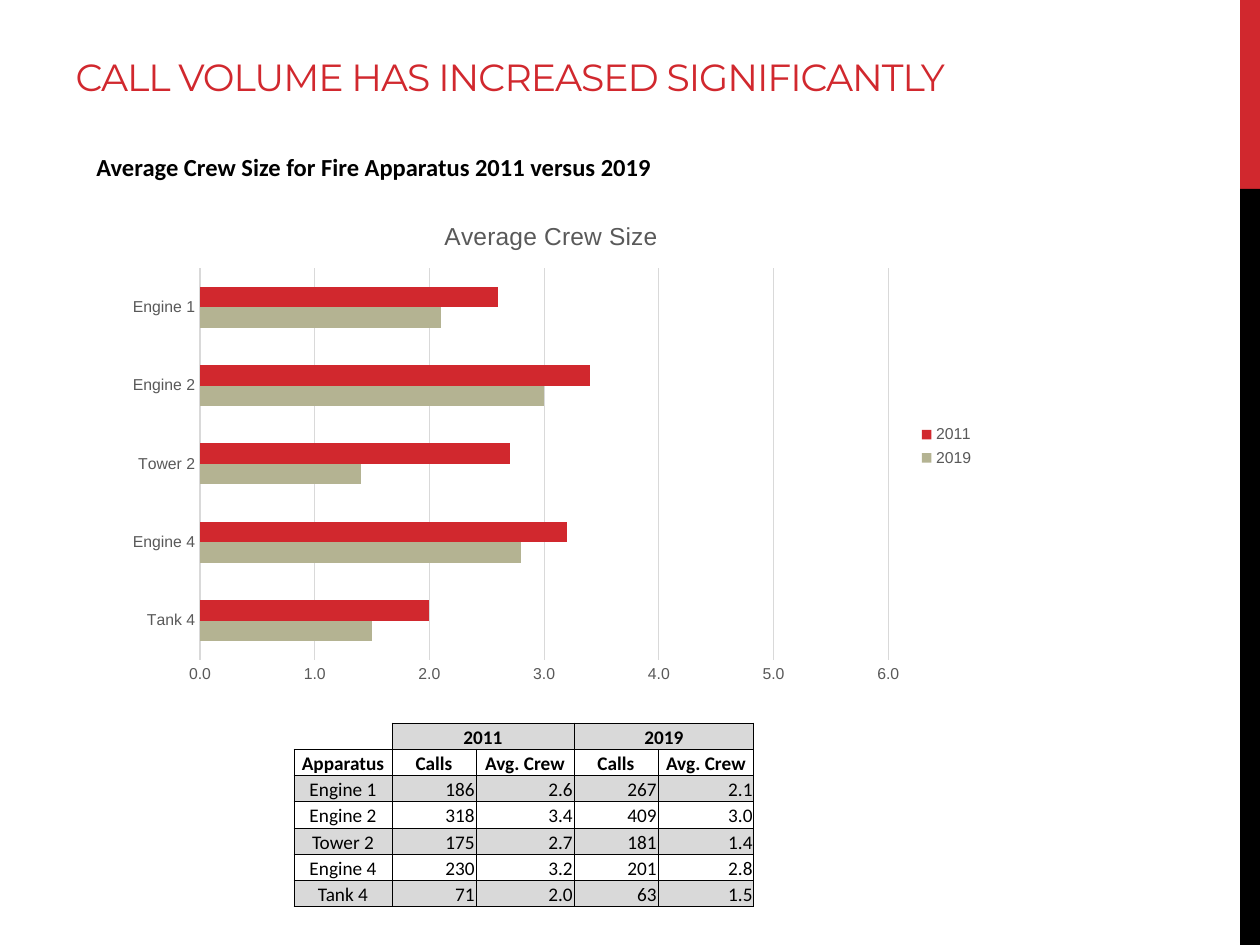
from lxml import etree
from pptx import Presentation
from pptx.chart.data import CategoryChartData
from pptx.dml.color import RGBColor
from pptx.enum import chart as ch, shapes, text
from pptx.oxml.ns import qn
from pptx.util import Pt

RED, BLACK, TAN = "D1282E", "000000", "B4B392"
SHADE, GREY = "D9D9D9", "595959"
CREWS = [  # apparatus, 2011 calls and crew, 2019 calls and crew
    ("Engine 1", 186, 2.6, 267, 2.1),
    ("Engine 2", 318, 3.4, 409, 3.0),
    ("Tower 2", 175, 2.7, 181, 1.4),
    ("Engine 4", 230, 3.2, 201, 2.8),
    ("Tank 4", 71, 2.0, 63, 1.5),
]


def rgb(color):
    return RGBColor.from_string(color)


def box(left, top, width, height):
    return Pt(left), Pt(top), Pt(width), Pt(height)


def set_font(font, name, size, color, bold=False):
    font.name, font.size, font.bold = name, Pt(size), bold
    font.color.rgb = rgb(color)


def set_line(line, color):
    line.color.rgb = rgb(color)
    line.width = Pt(0.75)


def add_bar(s, top, height, color):
    sp = s.shapes.add_shape(shapes.MSO_SHAPE.RECTANGLE, *box(708.6, top, 11.4, height))
    sp.shadow.inherit = False
    sp.fill.solid()
    sp.fill.fore_color.rgb = rgb(color)
    sp.line.fill.background()


def add_title(s, title):
    sp = s.shapes.title
    sp.left, sp.top, sp.width, sp.height = box(36, 12, 618, 48.5)
    tf = sp.text_frame
    tf.text = title
    tf.vertical_anchor = text.MSO_ANCHOR.BOTTOM
    p = tf.paragraphs[0]
    p.alignment = text.PP_ALIGN.LEFT
    set_font(p.font, "Montserrat", 21.6, RED)
    p.runs[0].font._element.set("spc", "-60")


def add_subtitle(s, subtitle):
    tf = s.shapes.add_textbox(*box(48, 82, 546, 24.5)).text_frame
    tf.word_wrap = True
    p = tf.paragraphs[0]
    p.text = subtitle
    p.line_spacing, p.space_after = 1.07, Pt(8)
    set_font(p.font, "Calibri", 14, BLACK, True)


def add_crew_chart(s):
    rows = CREWS[::-1]  # a bar chart fills from the bottom up
    data = CategoryChartData(number_format="0.0")
    data.categories = [row[0] for row in rows]
    data.add_series("2019", [row[4] for row in rows])
    data.add_series("2011", [row[2] for row in rows])
    chart = s.shapes.add_chart(
        ch.XL_CHART_TYPE.BAR_CLUSTERED, *box(66, 114, 498, 282), data).chart
    set_font(chart.font, "Arial", 10, BLACK)

    chart.has_title = True
    tf = chart.chart_title.text_frame
    tf.text = "Average Crew Size"
    set_font(tf.paragraphs[0].font, "Arial", 14, GREY)

    chart.has_legend = True
    chart.legend.position = ch.XL_LEGEND_POSITION.RIGHT
    chart.legend.include_in_layout = False
    set_font(chart.legend.font, "Arial", 9, GREY)

    plot = chart.plots[0]
    plot.gap_width, plot.overlap, plot.vary_by_categories = 182, 0, False
    for series, color in zip(plot.series, (TAN, RED)):
        series.format.fill.solid()
        series.format.fill.fore_color.rgb = rgb(color)

    cats, vals = chart.category_axis, chart.value_axis
    for axis in (cats, vals):
        axis.major_tick_mark = axis.minor_tick_mark = ch.XL_TICK_MARK.NONE
        set_font(axis.tick_labels.font, "Arial", 9, GREY)
    set_line(cats.format.line, SHADE)
    vals.format.line.fill.background()
    vals.minimum_scale, vals.maximum_scale, vals.major_unit = 0, 6, 1
    vals.tick_labels.number_format = "0.0"
    vals.tick_labels.number_format_is_linked = False
    set_line(vals.major_gridlines.format.line, SHADE)


def set_borders(cell, sides):
    """Draw the named sides (of L, R, T, B) in black and clear the others."""
    tcPr = cell._tc.get_or_add_tcPr()
    for side in "LRTB":
        ln = etree.SubElement(tcPr, qn(f"a:ln{side}"), w=str(Pt(0.5)))
        if side in sides:
            fill = etree.SubElement(ln, qn("a:solidFill"))
            etree.SubElement(fill, qn("a:srgbClr"), val=BLACK)
        else:
            etree.SubElement(ln, qn("a:noFill"))


def format_cell(cell, value, align, bold, shaded):
    cell.margin_left = cell.margin_right = cell.margin_top = Pt(0.7)
    cell.margin_bottom = 0
    cell.vertical_anchor = text.MSO_ANCHOR.BOTTOM
    p = cell.text_frame.paragraphs[0]
    if value:
        p.text = value
    p.alignment = align
    set_font(p.font, "Calibri", 11, BLACK, bold)
    if shaded:
        cell.fill.solid()
        cell.fill.fore_color.rgb = rgb(SHADE)
    else:
        cell.fill.background()


def add_crew_table(s):
    rows = [("", "2011", "", "2019", ""),
            ("Apparatus",) + ("Calls", "Avg. Crew") * 2]
    rows += [tuple(map(str, row)) for row in CREWS]
    widths = (56, 48, 56, 48, 54.8)
    table = s.shapes.add_table(
        len(rows), len(widths), *box(168, 413.2, sum(widths), 15 * len(rows))).table
    table.first_row = table.horz_banding = False
    for col, width in zip(table.columns, widths):
        col.width = Pt(width)
    for i, row in enumerate(rows):
        table.rows[i].height = Pt(15)
        for j, value in enumerate(row):
            cell = table.cell(i, j)
            corner = i == j == 0
            number = i > 1 and j > 0
            set_borders(cell, "RB" if corner else "LRTB")
            format_cell(cell, value,
                        text.PP_ALIGN.RIGHT if number else text.PP_ALIGN.CENTER,
                        bold=i < 2, shaded=i % 2 == 0 and not corner)
    for j in (1, 3):
        table.cell(0, j).merge(table.cell(0, j + 1))


def main():
    prs = Presentation()
    prs.slide_width, prs.slide_height = Pt(720), Pt(540)
    s = prs.slides.add_slide(prs.slide_layouts[5])
    add_bar(s, 0, 108, RED)
    add_bar(s, 108, 432, BLACK)
    add_title(s, "CALL VOLUME HAS INCREASED SIGNIFICANTLY")
    add_subtitle(s, "Average Crew Size for Fire Apparatus 2011 versus 2019")
    add_crew_chart(s)
    add_crew_table(s)
    prs.save("out.pptx")


if __name__ == "__main__":
    main()
